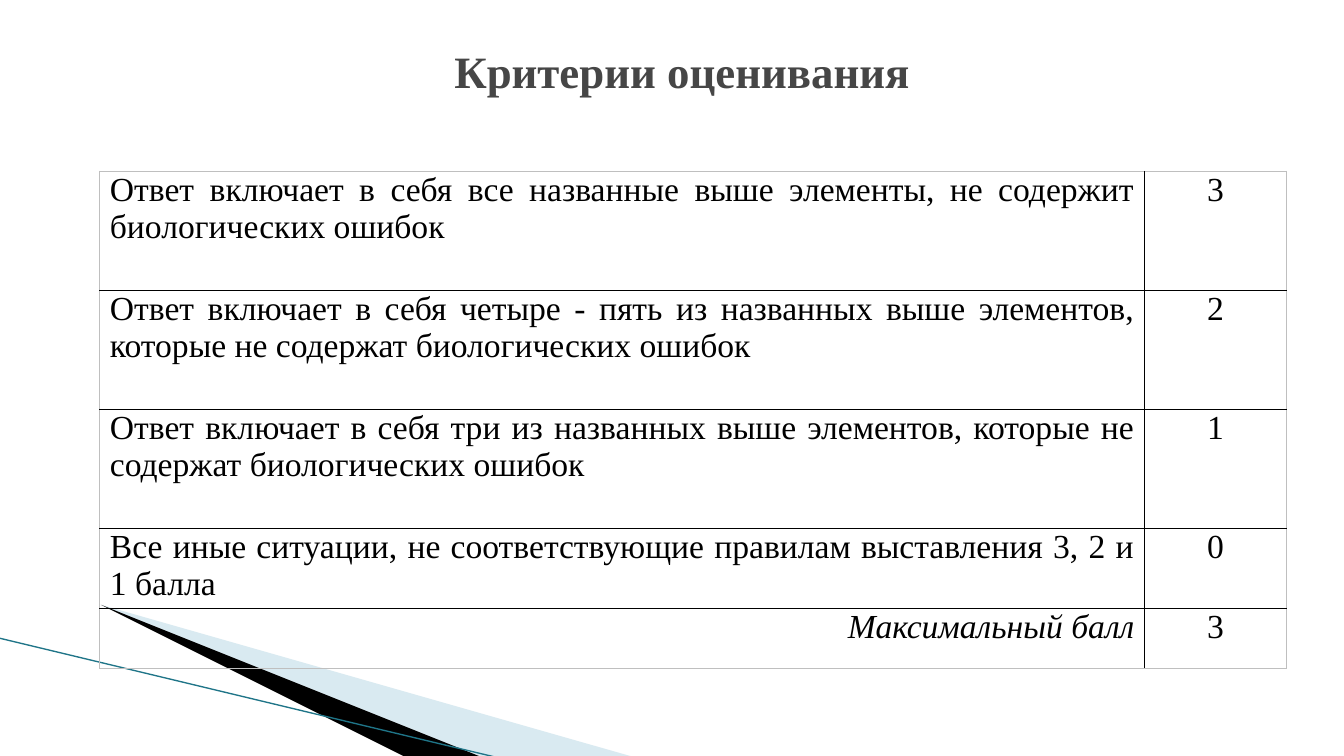
from dataclasses import dataclass

from lxml.etree import SubElement
from pptx import Presentation
from pptx.dml.color import RGBColor
from pptx.enum.shapes import MSO_CONNECTOR
from pptx.enum.text import MSO_ANCHOR, PP_ALIGN
from pptx.oxml.ns import qn
from pptx.slide import Slide
from pptx.table import _Cell
from pptx.text.text import _Paragraph
from pptx.util import Inches, Pt

BLACK = RGBColor(0x00, 0x00, 0x00)
TITLE_GRAY = RGBColor(0x46, 0x46, 0x46)
FRAME_GRAY = RGBColor(0xBF, 0xBF, 0xBF)
PALE_BLUE = RGBColor(0xA0, 0xCB, 0xDC)
TEAL = RGBColor(0x1F, 0x75, 0x88)
FONT = "Times New Roman"
COLUMN_WIDTHS = (10.36, 1.41)


@dataclass(frozen=True)
class Wedge:
    points: tuple[tuple[float, float], ...]
    color: RGBColor
    opacity: int


@dataclass(frozen=True)
class Criterion:
    text: str
    score: str
    height: float
    alignment: PP_ALIGN = PP_ALIGN.JUSTIFY
    italic: bool = False


WEDGES = (
    Wedge(((0.73, 6.5), (7.93, 7.51), (6.08, 7.51)), PALE_BLUE, 40),
    Wedge(((0.71, 6.49), (6.09, 7.51), (4.96, 7.52)), BLACK, 100),
)

CRITERIA = (
    Criterion("Ответ включает в себя все названные выше элементы, "
              "не содержит биологических ошибок", "3", 1.18),
    Criterion("Ответ включает в себя четыре - пять из названных выше элементов, "
              "которые не содержат биологических ошибок", "2", 1.18),
    Criterion("Ответ включает в себя три из названных выше элементов, "
              "которые не содержат биологических ошибок", "1", 1.18),
    Criterion("Все иные ситуации, не соответствующие правилам "
              "выставления 3, 2 и 1 балла", "0", 0.74),
    Criterion("Максимальный балл", "3", 0.59, PP_ALIGN.RIGHT, True),
)


def style_paragraph(para: _Paragraph, size: int, color: RGBColor,
                    alignment: PP_ALIGN) -> None:
    para.alignment = alignment
    para.font.name = FONT
    para.font.size = Pt(size)
    para.font.color.rgb = color


def draw_wedge(page: Slide, wedge: Wedge) -> None:
    start, *others = wedge.points
    builder = page.shapes.build_freeform(*start, scale=Inches(1))
    builder.add_line_segments(others, close=True)
    shape = builder.convert_to_shape()
    shape.shadow.inherit = False
    shape.line.fill.background()
    shape.fill.solid()
    shape.fill.fore_color.rgb = wedge.color
    if wedge.opacity < 100:
        color = shape._element.spPr.find(f"{qn('a:solidFill')}/{qn('a:srgbClr')}")
        SubElement(color, qn("a:alpha"), val=str(wedge.opacity * 1000))


def draw_edge_line(page: Slide) -> None:
    line = page.shapes.add_connector(
        MSO_CONNECTOR.STRAIGHT, Inches(-0.01), Inches(6.33), Inches(4.95), Inches(7.52))
    line.line.color.rgb = TEAL
    line.line.width = Pt(0.95)
    SubElement(line._element.spPr, qn("a:effectLst"))


def draw_title(page: Slide) -> None:
    box = page.shapes.add_textbox(Inches(0.67), Inches(0.3), Inches(12.19), Inches(0.8))
    frame = box.text_frame
    frame.word_wrap = True
    frame.vertical_anchor = MSO_ANCHOR.MIDDLE
    para = frame.paragraphs[0]
    para.text = "Критерии оценивания"
    style_paragraph(para, 32, TITLE_GRAY, PP_ALIGN.CENTER)
    para.font.bold = True


def set_borders(cell: _Cell, outer_sides: dict[str, bool]) -> None:
    properties = cell._tc.get_or_add_tcPr()
    for index, (side, is_outer) in enumerate(outer_sides.items()):
        border = SubElement(properties, qn(f"a:ln{side}"), w=str(Pt(1)))
        fill = SubElement(border, qn("a:solidFill"))
        SubElement(fill, qn("a:srgbClr"), val=str(FRAME_GRAY if is_outer else BLACK))
        properties.insert(index, border)


def fill_cell(cell: _Cell, text: str, alignment: PP_ALIGN, italic: bool) -> None:
    cell.fill.background()
    cell.margin_left = cell.margin_right = Inches(0.1)
    cell.margin_top = cell.margin_bottom = 0
    para = cell.text_frame.paragraphs[0]
    para.text = text
    style_paragraph(para, 24, BLACK, alignment)
    para.font.italic = italic


def draw_criteria(page: Slide) -> None:
    row_count, column_count = len(CRITERIA), len(COLUMN_WIDTHS)
    table = page.shapes.add_table(
        row_count, column_count, Inches(0.99), Inches(1.7),
        Inches(sum(COLUMN_WIDTHS)), Inches(sum(item.height for item in CRITERIA))).table
    table.first_row = table.horz_banding = False
    for column, width in zip(table.columns, COLUMN_WIDTHS):
        column.width = Inches(width)
    for row, item in enumerate(CRITERIA):
        table.rows[row].height = Inches(item.height)
        fill_cell(table.cell(row, 0), item.text, item.alignment, item.italic)
        fill_cell(table.cell(row, 1), item.score, PP_ALIGN.CENTER, False)
        for column in range(column_count):
            set_borders(table.cell(row, column), {
                "L": column == 0,
                "R": column == column_count - 1,
                "T": row == 0,
                "B": row == row_count - 1,
            })


def main() -> None:
    deck = Presentation()
    deck.slide_width, deck.slide_height = Inches(13.33), Inches(7.5)
    page = deck.slides.add_slide(deck.slide_layouts[6])
    for wedge in WEDGES:
        draw_wedge(page, wedge)
    draw_edge_line(page)
    draw_title(page)
    draw_criteria(page)
    deck.save("out.pptx")


if __name__ == "__main__":
    main()
